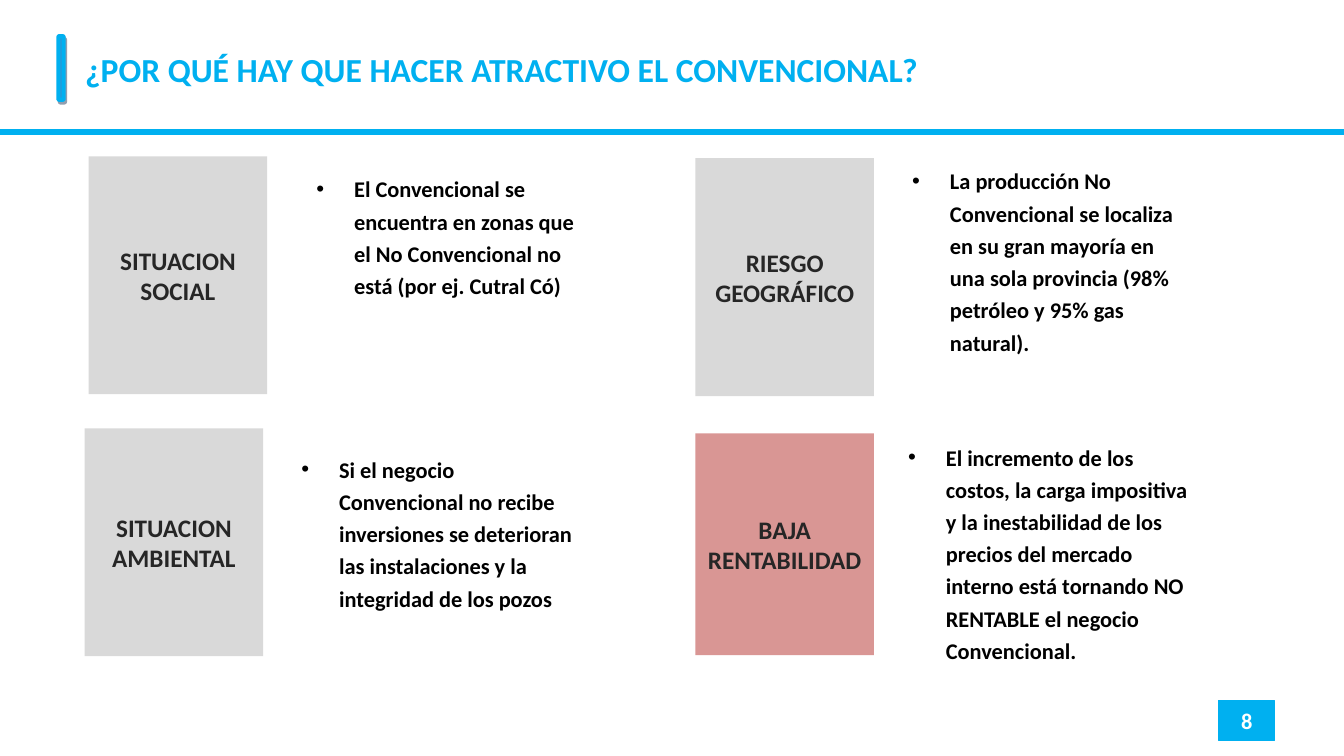
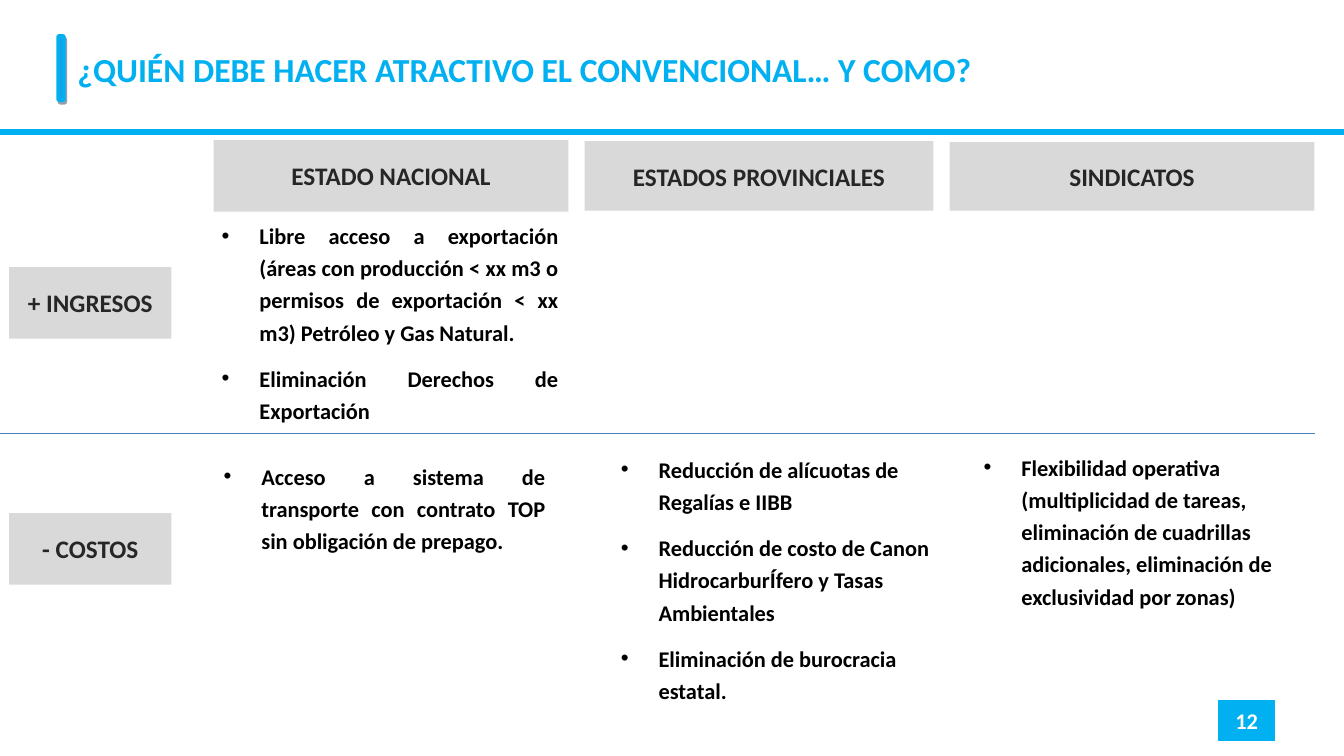
from lxml.etree import SubElement
from pptx import Presentation
from pptx.dml.color import RGBColor
from pptx.enum.shapes import MSO_CONNECTOR, MSO_SHAPE
from pptx.enum.text import MSO_ANCHOR, PP_ALIGN
from pptx.oxml.ns import qn
from pptx.util import Inches, Pt

CYAN = RGBColor(0x00, 0xB0, 0xF0)
BLUE = RGBColor(0x4F, 0x81, 0xBD)
NAVY = RGBColor(0x24, 0x3F, 0x60)
STEEL = RGBColor(0x4B, 0x7E, 0xBC)
GREY = RGBColor(0xD9, 0xD9, 0xD9)
ROSE = RGBColor(0xD9, 0x96, 0x94)
DARK = RGBColor(0x26, 0x26, 0x26)
BLACK = RGBColor(0x00, 0x00, 0x00)
WHITE = RGBColor(0xFF, 0xFF, 0xFF)

deck = Presentation()
deck.slide_width, deck.slide_height = Inches(13.33), Inches(7.5)
COL, ROW = deck.slide_width / 100, deck.slide_height / 100

CENTRED = {"alignment": PP_ALIGN.CENTER}
LEFT = {"alignment": PP_ALIGN.LEFT}
LIST_LEFT = {"alignment": PP_ALIGN.LEFT, "line_spacing": 1.2, "space_after": Pt(5)}
LIST_JUSTIFIED = {**LIST_LEFT, "alignment": PP_ALIGN.JUSTIFY}
STYLES = {
    "title": (24, CYAN, MSO_ANCHOR.MIDDLE, LEFT),
    "page": (16, WHITE, MSO_ANCHOR.MIDDLE, CENTRED),
    "heading": (18, DARK, MSO_ANCHOR.MIDDLE, CENTRED),
    "list": (16, BLACK, MSO_ANCHOR.TOP, LIST_LEFT),
    "justified": (16, BLACK, MSO_ANCHOR.TOP, LIST_JUSTIFIED),
}


def add_block(slide, area, fill=None, line=None, weight=0.75, preset=MSO_SHAPE.RECTANGLE):
    left, top, width, height = area
    bounds = [round(n) for n in (left * COL, top * ROW, width * COL, height * ROW)]
    if fill is None:
        return slide.shapes.add_textbox(*bounds)
    block = slide.shapes.add_shape(preset, *bounds)
    block.shadow.inherit = False
    block.fill.solid()
    block.fill.fore_color.rgb = fill
    if line is None:
        block.line.fill.background()
    else:
        block.line.color.rgb = line
        block.line.width = Pt(weight)
    return block


def write(block, style, *texts):
    size, colour, anchor, layout = STYLES[style]
    frame = block.text_frame
    frame.word_wrap = True
    frame.vertical_anchor = anchor
    for index, text in enumerate(texts):
        paragraph = frame.paragraphs[0] if index == 0 else frame.add_paragraph()
        if style in ("list", "justified"):
            properties = paragraph._p.get_or_add_pPr()
            properties.set("marL", str(Inches(0.375)))
            properties.set("indent", str(-Inches(0.375)))
            SubElement(properties, qn("a:buFont"), typeface="Arial")
            SubElement(properties, qn("a:buChar"), char="•")
            if index:
                paragraph.space_before = Pt(5)
        for name, value in layout.items():
            setattr(paragraph, name, value)
        run = paragraph.add_run()
        run.text = text
        for name, value in {"name": "Calibri", "size": Pt(size), "bold": True}.items():
            setattr(run.font, name, value)
        run.font.color.rgb = colour


HEADER_RULE = (100, 17.47, CYAN, 4.5)
LEFT_LIST, RIGHT_LIST = 21.83, 22.43
CARD = 13.28
LABEL = 9.47

pages = [
    {
        "title": " ¿POR QUÉ HAY QUE HACER ATRACTIVO EL CONVENCIONAL?",
        "number": "8",
        "rules": [HEADER_RULE],
        "headings": [
            ("SITUACION SOCIAL", (6.6, 20.67, CARD, 31.47), GREY),
            ("RIESGO GEOGRÁFICO", (51.75, 20.93, CARD, 31.47), GREY),
            ("SITUACION AMBIENTAL", (6.3, 56.67, CARD, 30.13), GREY),
            ("BAJA RENTABILIDAD", (51.75, 57.33, CARD, 29.33), ROSE),
        ],
        "lists": [
            ("list", (22.8, 21.87, 20.7, 22.93), [
                "El Convencional se encuentra en zonas que el No Convencional no está "
                "(por ej. Cutral Có)"]),
            ("list", (67.13, 20.8, LEFT_LIST, 26.93), [
                "La producción No Convencional se localiza en su gran mayoría en una sola "
                "provincia (98% petróleo y 95% gas natural)."]),
            ("list", (21.68, 58.93, LEFT_LIST, 22.93), [
                "Si el negocio Convencional no recibe inversiones se deterioran las "
                "instalaciones y la integridad de los pozos"]),
            ("list", (66.83, 57.33, RIGHT_LIST, 31.2), [
                "El incremento de los costos, la carga impositiva y la inestabilidad de los "
                "precios del mercado interno está tornando NO RENTABLE el negocio "
                "Convencional."]),
        ],
    },
    {
        "title": "¿QUIÉN DEBE HACER ATRACTIVO EL CONVENCIONAL… Y COMO?",
        "number": "12",
        "rules": [HEADER_RULE, (97.88, 57.33, STEEL, 0.75)],
        "headings": [
            ("ESTADO NACIONAL", (15.9, 18.53, 26.4, LABEL), GREY),
            ("ESTADOS PROVINCIALES", (43.5, 18.67, 25.95, 9.2), GREY),
            ("SINDICATOS", (70.65, 18.8, 27.15, 9.07), GREY),
            ("+ INGRESOS", (0.68, 35.33, 12.08, LABEL), GREY),
            ("- COSTOS", (0.68, 67.87, 12.08, LABEL), GREY),
        ],
        "lists": [
            ("justified", (15.75, 28, 26.55, 29.07), [
                "Libre acceso a exportación (áreas con producción < xx m3 o permisos de "
                "exportación < xx m3) Petróleo y Gas Natural.",
                "Eliminación Derechos de Exportación"]),
            ("justified", (15.9, 59.87, 25.43, 14.27), [
                "Acceso a sistema de transporte con contrato TOP sin obligación de prepago."]),
            ("list", (45.45, 58.93, 25.2, 40), [
                "Reducción de alícuotas de Regalías e IIBB",
                "Reducción de costo de Canon HidrocarburÍfero y Tasas Ambientales",
                "Eliminación de burocracia estatal."]),
            ("list", (72.45, 58.67, 24, 29.07), [
                "Flexibilidad operativa (multiplicidad de tareas, eliminación de cuadrillas "
                "adicionales, eliminación de exclusividad por zonas)"]),
        ],
    },
]

for page in pages:
    slide = deck.slides.add_slide(deck.slide_layouts[6])

    for end, height, colour, weight in page["rules"]:
        y = round(height * ROW)
        rule = slide.shapes.add_connector(MSO_CONNECTOR.STRAIGHT, 0, y, round(end * COL), y)
        rule.line.color.rgb = colour
        rule.line.width = Pt(weight)
        SubElement(rule._element.spPr, qn("a:effectLst"))

    accent = add_block(slide, (4.35, 4.8, 0.38, 8.4), BLUE, CYAN, 3, MSO_SHAPE.ROUNDED_RECTANGLE)
    effects = accent._element.spPr.find(qn("a:effectLst"))
    shadow = SubElement(effects, qn("a:outerShdw"), dist=str(Pt(2.2)), dir=str(63 * 60000),
                        algn="ctr", rotWithShape="0")
    tint = SubElement(shadow, qn("a:srgbClr"), val=str(NAVY))
    SubElement(tint, qn("a:alpha"), val="50000")

    write(add_block(slide, (5.03, 4, 90, 10.27)), "title", page["title"])
    write(add_block(slide, (90.7, 92.67, 4.13, 5.33), CYAN, CYAN), "page", page["number"])

    for text, area, fill in page["headings"]:
        write(add_block(slide, area, fill), "heading", text)
    for style, area, items in page["lists"]:
        write(add_block(slide, area), style, *items)

deck.save("out.pptx")
